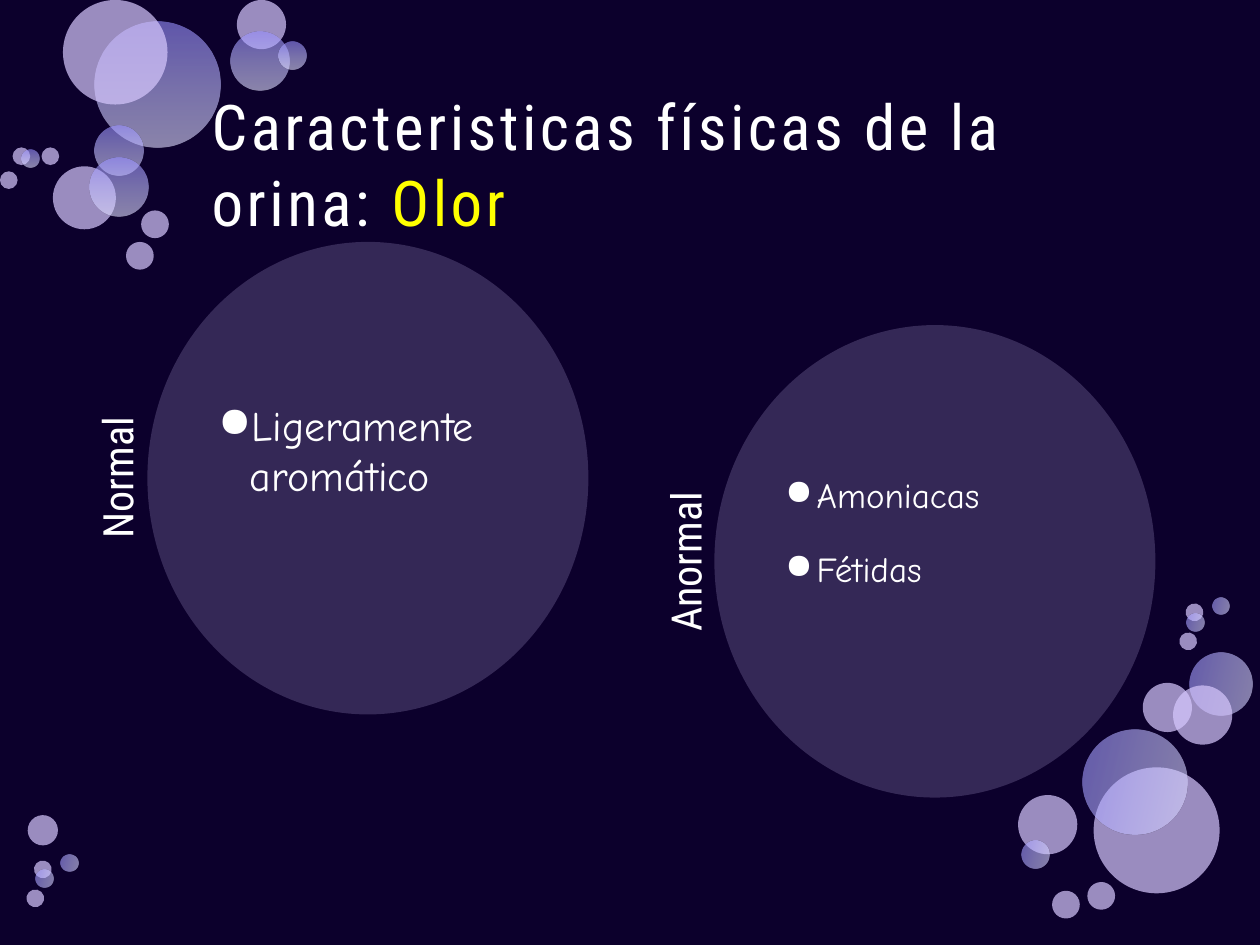
"""Builds the slide about the smell of urine, normal and abnormal."""
import pptx
import pptx.dml.color
import pptx.enum.shapes
import pptx.enum.text
import pptx.oxml
import pptx.oxml.ns
import pptx.util
from lxml import etree

Inches, Pt = pptx.util.Inches, pptx.util.Pt
RGBColor = pptx.dml.color.RGBColor
ANCHOR, ALIGN = pptx.enum.text.MSO_ANCHOR, pptx.enum.text.PP_ALIGN
qn = pptx.oxml.ns.qn

NAVY = RGBColor(0x0C, 0x00, 0x2C)
LILAC = RGBColor(0xD7, 0xC8, 0xFE)
WHITE = RGBColor(0xFF, 0xFF, 0xFF)
YELLOW = RGBColor(0xFF, 0xFF, 0x00)
GRADIENT = [
    (0, RGBColor(0x98, 0x90, 0xFF)),
    (50, RGBColor(0xBF, 0xBB, 0xFF)),
    (100, RGBColor(0xE0, 0xDE, 0xFF)),
]
HEAD_FONT, BODY_FONT = "Roboto Condensed", "Comic Neue"

TOP_BUBBLES = [
    ("shaded", 0.75, 0.17, 1), ("plain", 0.42, 1.32, 0.5),
    ("shaded", 0.75, 1, 0.39), ("shaded", 0.71, 1.25, 0.47),
    ("plain", 0.5, 0, 0.83), ("plain", 1.88, 0, 0.39),
    ("shaded", 1.83, 0.25, 0.47), ("shaded", 2.21, 0.33, 0.22),
    ("plain", 1.12, 1.67, 0.22), ("plain", 0.1, 1.17, 0.14),
    ("plain", 1, 1.92, 0.22), ("plain", 0, 1.36, 0.14),
    ("shaded", 0.17, 1.19, 0.14), ("plain", 0.33, 1.17, 0.14),
]
BOTTOM_BUBBLES = [
    ("plain", 8.68, 6.09, 1), ("shaded", 9.44, 5.18, 0.5),
    ("plain", 9.07, 5.42, 0.39), ("plain", 9.31, 5.44, 0.47),
    ("shaded", 8.59, 5.79, 0.83), ("plain", 0.22, 6.47, 0.24),
    ("plain", 8.08, 6.31, 0.47), ("shaded", 8.11, 6.67, 0.22),
    ("plain", 8.35, 7.07, 0.22), ("plain", 9.41, 4.79, 0.14),
    ("plain", 8.63, 7, 0.22), ("shaded", 9.62, 4.74, 0.14),
    ("shaded", 9.42, 4.87, 0.14), ("plain", 9.36, 5.02, 0.14),
    ("plain", 0.27, 6.83, 0.14), ("shaded", 0.48, 6.78, 0.14),
    ("shaded", 0.28, 6.9, 0.14), ("plain", 0.21, 7.06, 0.14),
]


class Deck:
    """Holds the style and the current slide."""

    def __init__(self):
        self.prs = pptx.Presentation()
        self.prs.slide_width, self.prs.slide_height = Inches(10), Inches(7.5)
        self.s = self.prs.slides.add_slide(self.prs.slide_layouts[5])
        fill = self.s.background.fill
        fill.solid()
        fill.fore_color.rgb = NAVY

    def apply(self, obj, **values):
        for name, value in values.items():
            setattr(obj, name, value)

    def run(self, p, text, size, font, color=WHITE):
        r = p.add_run()
        r.text = text
        self.apply(r.font, size=Pt(size), name=font, bold=False)
        r.font.color.rgb = color
        return r

    def frame(self, sp, anchor, top=0.05):
        tf = sp.text_frame
        side = Inches(0.05)
        self.apply(tf, word_wrap=True, vertical_anchor=anchor, margin_left=side,
                   margin_right=side, margin_top=Inches(top), margin_bottom=side)
        return tf

    def ellipse(self, x, y, w, h, alpha):
        sp = self.s.shapes.add_shape(pptx.enum.shapes.MSO_SHAPE.OVAL,
                                     Inches(x), Inches(y), Inches(w), Inches(h))
        sp.shadow.inherit = False
        sp.line.fill.background()
        sp.fill.solid()
        sp.fill.fore_color.rgb = LILAC
        color = sp._element.spPr.find(qn("a:solidFill"))[0]
        etree.SubElement(color, qn("a:alpha")).set("val", str(alpha * 1000))
        return sp

    def bubble(self, kind, x, y, size, turned):
        sp = self.ellipse(x, y, size, size, 70)
        spPr = sp._element.spPr
        if turned:
            sp.rotation = 103.3
            spPr.find(qn("a:xfrm")).set("flipV", "1")
        if kind == "shaded":
            stops = "".join(
                f'<a:gs pos="{pos * 1000}"><a:srgbClr val="{color}">'
                '<a:alpha val="60000"/></a:srgbClr></a:gs>' for pos, color in GRADIENT)
            grad = pptx.oxml.parse_xml(
                f'<a:gradFill {pptx.oxml.ns.nsdecls("a")} rotWithShape="1">'
                f'<a:gsLst>{stops}</a:gsLst><a:lin ang="5400000" scaled="0"/></a:gradFill>')
            spPr.replace(spPr.find(qn("a:solidFill")), grad)

    def title(self, *parts):
        sp = self.s.shapes.title
        self.apply(sp, left=Inches(1.58), top=Inches(0.67),
                   width=Inches(7.25), height=Inches(1.25))
        tf = sp.text_frame
        self.apply(tf, word_wrap=True, vertical_anchor=ANCHOR.MIDDLE,
                   auto_size=pptx.enum.text.MSO_AUTO_SIZE.NONE)
        p = tf.paragraphs[0]
        p.alignment = ALIGN.LEFT
        for text, color in parts:
            r = self.run(p, text, 36, HEAD_FONT, color)
            r.font._element.set("spc", "200")

    def label(self, x, y, text):
        sp = self.s.shapes.add_textbox(Inches(x), Inches(y), Inches(3.75), Inches(0.7))
        sp.rotation = 270
        p = self.frame(sp, ANCHOR.MIDDLE).paragraphs[0]
        p.alignment = ALIGN.CENTER
        self.run(p, text, 24, HEAD_FONT)

    def circle(self, x, y, size, top, items):
        sp = self.ellipse(x, y, 3.5, 3.75, 20)
        tf = self.frame(sp, ANCHOR.TOP, top)
        for i, text in enumerate(items):
            p = tf.add_paragraph() if i else tf.paragraphs[0]
            self.apply(p, alignment=ALIGN.LEFT, space_before=Pt(18 if i else 0))
            pPr = p._p.get_or_add_pPr()
            pPr.set("marL", str(Inches(0.25)))
            pPr.set("indent", str(Inches(-0.25)))
            etree.SubElement(pPr, qn("a:buChar")).set("char", "●")
            self.run(p, text, size, BODY_FONT)


def main():
    deck = Deck()
    for bubbles, turned in ((TOP_BUBBLES, False), (BOTTOM_BUBBLES, True)):
        for bubble in bubbles:
            deck.bubble(*bubble, turned)
    deck.title(("Caracteristicas físicas de la orina: ", WHITE), ("Olor", YELLOW))
    deck.label(-0.95, 3.44, "Normal")
    deck.circle(1.17, 1.92, 24, 0.7, ["Ligeramente aromático"])
    deck.label(3.56, 4.11, "Anormal")
    deck.circle(5.67, 2.58, 20, 0.63, ["Amoniacas", "Fétidas"])
    deck.prs.save("out.pptx")


if __name__ == "__main__":
    main()
